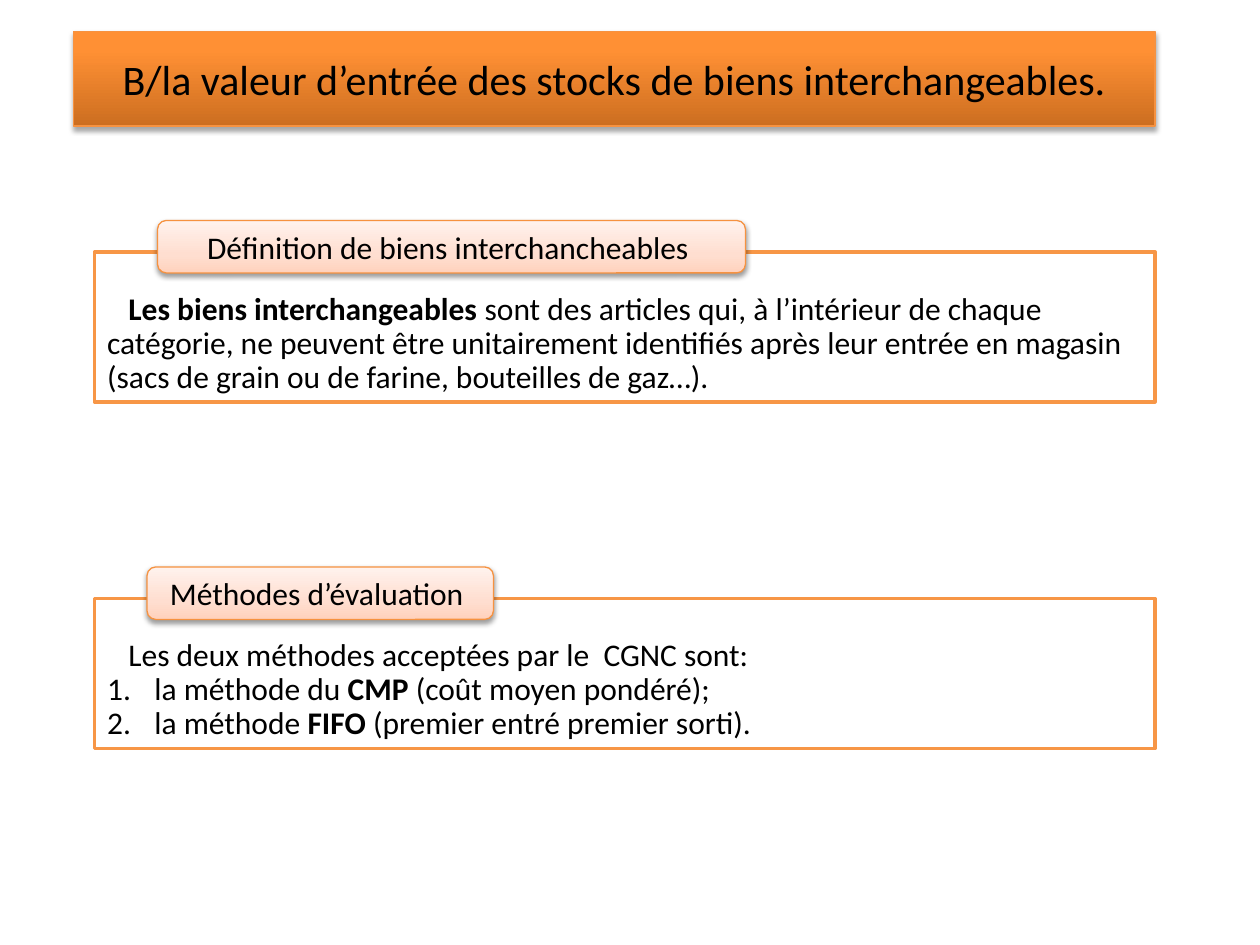
"""Build the slide on the entry value of interchangeable goods."""
from lxml import etree
from pptx import Presentation, util as u
from pptx.dml.color import RGBColor
from pptx.enum import shapes, text
from pptx.oxml import ns

INK = RGBColor(0x00, 0x00, 0x00)
PAPER = RGBColor(0xFF, 0xFF, 0xFF)
EDGE = RGBColor(0xF7, 0x96, 0x46)
RIM = RGBColor(0xF6, 0x92, 0x40)
DEEP = [(0, RGBColor(0xCC, 0x6E, 0x20)), (80, RGBColor(0xFF, 0x90, 0x34)),
        (100, RGBColor(0xFF, 0x91, 0x36))]
PALE = [(0, RGBColor(0xFF, 0xD2, 0xBD)), (35, RGBColor(0xFF, 0xDE, 0xD0)),
        (100, RGBColor(0xFF, 0xF2, 0xED))]

HEAD = "B/la valeur d’entrée des stocks de biens interchangeables."
PARTS = [
    {"tab": "Définition de biens interchancheables ", "left": 90, "width": 336,
     "body": [("lead", [
         ("Les biens interchangeables ", True),
         ("sont des articles qui, à l’intérieur de chaque catégorie, ne peuvent "
          "être unitairement identifiés après leur entrée en magasin (sacs de "
          "grain ou de farine, bouteilles de gaz…).", False)])]},
    {"tab": "Méthodes d’évaluation ", "left": 84, "width": 198,
     "body": [
         ("lead", [("Les deux méthodes acceptées par le  CGNC sont:", False)]),
         ("item", [("la méthode du ", False), ("CMP", True),
                   (" (coût moyen pondéré);", False)]),
         ("item", [("la méthode ", False), ("FIFO", True),
                   (" (premier entré premier sorti).", False)])]},
]

TOP, STEP, RISE = 144, 198, 18
INDENT = {"lead": (0, 12.2), "item": (27, -27)}
FRAME = {"word_wrap": True, "auto_size": text.MSO_AUTO_SIZE.NONE,
         "margin_left": u.Pt(7.2), "margin_right": u.Pt(7.2),
         "margin_top": u.Pt(3.6), "margin_bottom": u.Pt(3.6)}
MID = {**FRAME, "vertical_anchor": text.MSO_ANCHOR.MIDDLE}
HIGH = {**FRAME, "vertical_anchor": text.MSO_ANCHOR.TOP,
        "margin_top": u.Pt(23.4)}
TIGHT = {"line_spacing": 0.9, "space_before": u.Pt(0), "space_after": u.Pt(0),
         "alignment": text.PP_ALIGN.LEFT}
MIDDLE = {**TIGHT, "line_spacing": 1.0, "alignment": text.PP_ALIGN.CENTER}


def put(item, vals):
    for name, val in vals.items():
        setattr(item, name, val)


def place(shape, *box):
    put(shape, dict(zip(("left", "top", "width", "height"), map(u.Pt, box))))


def node(root, tag, **vals):
    return etree.SubElement(root, ns.qn("a:" + tag),
                            {key: str(val) for key, val in vals.items()})


def form(shape, kind):
    geom = node(shape.element.spPr, "prstGeom", prst=kind)
    node(geom, "avLst")


def edge(shape, tint, width):
    shape.line.color.rgb = tint
    shape.line.width = u.Pt(width)


def write(para, runs, size):
    for words, bold in runs:
        run = para.add_run()
        run.text = words
        put(run.font, {"name": "Calibri", "size": u.Pt(size), "bold": bold})
        run.font.color.rgb = INK


def label(shape, words, size, stops, drop, alpha):
    root = shape.element.spPr
    grad = node(root, "gradFill", rotWithShape=1)
    steps = node(grad, "gsLst")
    for spot, tint in stops:
        node(node(steps, "gs", pos=spot * 1000), "srgbClr", val=tint)
    node(grad, "lin", ang=270 * 60000, scaled=0)
    edge(shape, RIM, 0.75)
    cast = node(node(root, "effectLst"), "outerShdw", blurRad=u.Pt(3.1),
                dist=u.Pt(drop), dir=90 * 60000, rotWithShape=0)
    node(node(cast, "srgbClr", val="000000"), "alpha", val=alpha * 1000)
    put(shape.text_frame, MID)
    para = shape.text_frame.paragraphs[0]
    put(para, MIDDLE)
    write(para, [(words, False)], size)


def fill(shape, body):
    shape.fill.solid()
    shape.fill.fore_color.rgb = PAPER
    edge(shape, EDGE, 2)
    frame = shape.text_frame
    put(frame, HIGH)
    for row, (kind, runs) in enumerate(body):
        para = frame.add_paragraph() if row else frame.paragraphs[0]
        put(para, TIGHT)
        props = para._p.get_or_add_pPr()
        for key, val in zip(("marL", "indent"), INDENT[kind]):
            props.set(key, str(u.Pt(val)))
        if kind == "item":
            node(props, "buFont", typeface="+mj-lt")
            node(props, "buAutoNum", type="arabicPeriod")
        else:
            node(props, "buNone")
        write(para, runs, 18)


def main():
    deck = Presentation()
    put(deck, {"slide_width": u.Pt(720), "slide_height": u.Pt(540)})
    slide = deck.slides.add_slide(deck.slide_layouts[3])
    title = slide.shapes.title
    place(title, 42, 18, 618, 54)
    form(title, "roundRect")
    label(title, HEAD, 24, DEEP, 1.8, 35)
    for row, part in enumerate(PARTS):
        top = TOP + row * STEP
        box = slide.placeholders[row + 1]
        place(box, 54, top, 606, 85.7)
        form(box, "rect")
        fill(box, part["body"])
        tab = slide.shapes.add_shape(
            shapes.MSO_SHAPE.ROUNDED_RECTANGLE,
            *map(u.Pt, (part["left"], top - RISE, part["width"], 30)))
        label(tab, part["tab"], 18, PALE, 1.6, 38)
    deck.save("out.pptx")


if __name__ == "__main__":
    main()
